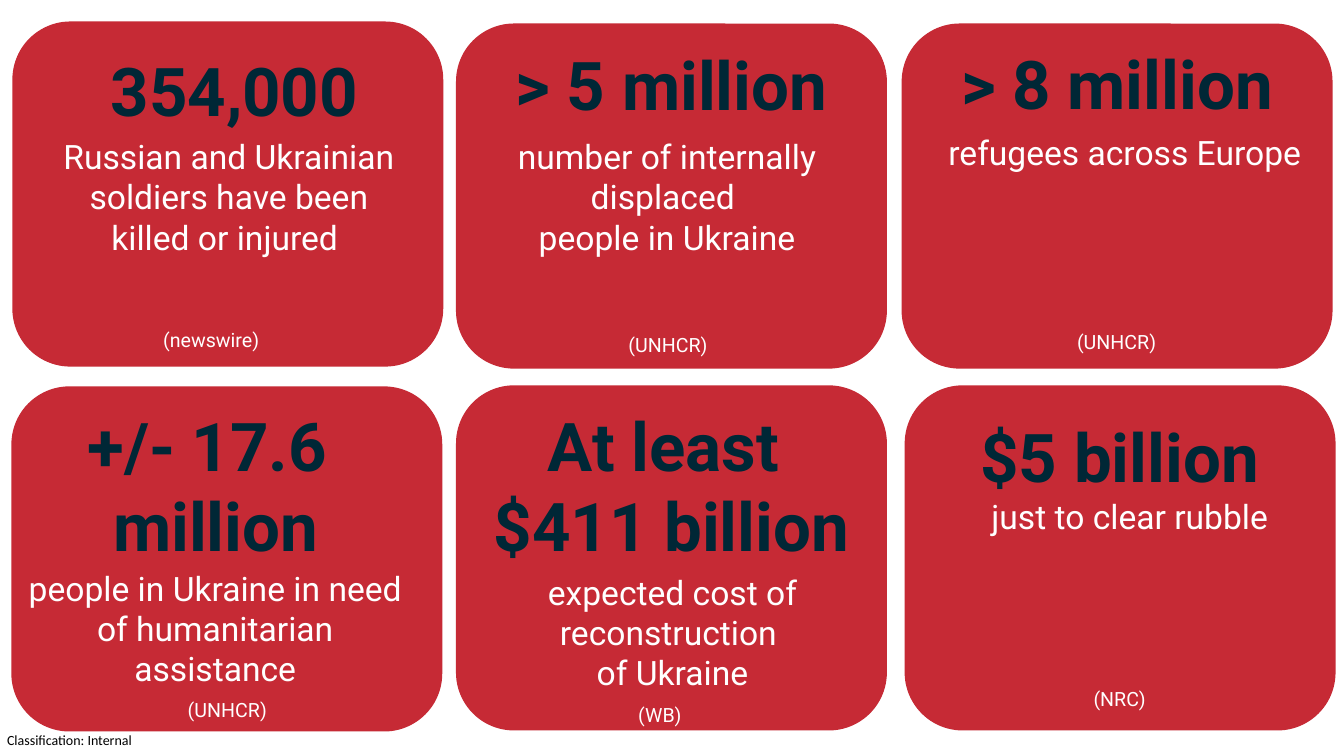
from pptx import Presentation
from pptx.dml.color import RGBColor
from pptx.enum.shapes import MSO_SHAPE
from pptx.enum.text import MSO_AUTO_SIZE, PP_ALIGN
from pptx.util import Inches, Pt

RED = RGBColor(0xC6, 0x2A, 0x35)
NAVY = RGBColor(0x00, 0x27, 0x36)
WHITE = RGBColor(0xFF, 0xFF, 0xFF)
BLACK = RGBColor(0x00, 0x00, 0x00)

CARD_WIDTH, CARD_HEIGHT = 4.26, 3.41
HEADLINE = {"name": "Roboto", "size": Pt(48), "bold": True}
DESCRIPTION = {"name": "Roboto", "size": Pt(24)}
SOURCE = {"name": "Roboto", "size": Pt(14)}
FOOTER = {"name": "Calibri", "size": Pt(10)}

FACTS = [
    {
        "card": (0.13, 0.22),
        "headline": ((0.69, 0.44, 3.27, 0.91), ["354,000"]),
        "description": ((0.44, 1.3, 3.66, 1.31),
                        ["Russian and Ukrainian soldiers have been killed or injured "]),
        "source": ((0.39, 3.2), "(newswire)"),
    },
    {
        "card": (4.53, 0.24),
        "headline": ((3.34, 0.38, 6.64, 0.91), ["> 5 million"]),
        "description": ((4.92, 1.3, 3.39, 1.31),
                        ["number of internally displaced ", "people in Ukraine"]),
        "source": ((4.92, 3.25), "(UNHCR)"),
    },
    {
        "card": (8.95, 0.24),
        "headline": ((7.76, 0.37, 6.64, 0.91), ["> 8 million"]),
        "description": ((7.82, 1.26, 6.67, 0.5), ["refugees across Europe"]),
        "source": ((9.37, 3.22), "(UNHCR)"),
    },
    {
        "card": (0.12, 3.84),
        "headline": ((-1.18, 3.96, 6.64, 1.72), ["+/- 17.6 ", "million"]),
        "description": ((0.1, 5.58, 4.07, 1.31),
                        ["people in Ukraine in need of humanitarian assistance"]),
        "source": ((0.55, 6.87), "(UNHCR)"),
    },
    {
        "card": (4.53, 3.83),
        "headline": ((3.67, 3.96, 5.98, 1.72), ["At least ", "$411 billion"]),
        "description": ((4.48, 5.62, 4.38, 1.31),
                        ["expected cost of reconstruction ", "of Ukraine"]),
        "source": ((4.84, 6.92), "(WB)"),
    },
    {
        "card": (8.98, 3.83),
        "headline": ((9.11, 4.07, 3.99, 0.91), ["$5 billion"]),
        "description": ((7.87, 4.87, 6.67, 0.5), ["just to clear rubble"]),
        "source": ((9.4, 6.77), "(NRC)"),
    },
]


def add_card(page, left, top):
    card = page.shapes.add_shape(
        MSO_SHAPE.ROUNDED_RECTANGLE,
        Inches(left), Inches(top), Inches(CARD_WIDTH), Inches(CARD_HEIGHT))
    card.shadow.inherit = False
    card.fill.solid()
    card.fill.fore_color.rgb = RED
    card.line.color.rgb = RED
    card.line.width = Pt(1)


def add_text(page, place, lines, style, color, align=PP_ALIGN.CENTER):
    box = page.shapes.add_textbox(*[Inches(length) for length in place])
    frame = box.text_frame
    frame.word_wrap = True
    frame.auto_size = MSO_AUTO_SIZE.SHAPE_TO_FIT_TEXT
    for index, line in enumerate(lines):
        para = frame.add_paragraph() if index else frame.paragraphs[0]
        para.alignment = align
        span = para.add_run()
        span.text = line
        span.font.color.rgb = color
        for name, value in style.items():
            setattr(span.font, name, value)
    return frame


def add_footer(page):
    frame = add_text(page, (0.07, 7.26, 1.27, 0.17), ["Classification: Internal"],
                     FOOTER, BLACK, PP_ALIGN.LEFT)
    for side in ("left", "top", "right", "bottom"):
        setattr(frame, f"margin_{side}", 0)


def main():
    deck = Presentation()
    deck.slide_width, deck.slide_height = Inches(13.33), Inches(7.5)
    page = deck.slides.add_slide(deck.slide_layouts.get_by_name("Blank"))
    add_footer(page)
    for fact in FACTS:
        add_card(page, *fact["card"])
    for fact in FACTS:
        add_text(page, *fact["description"], DESCRIPTION, WHITE)
        corner, source = fact["source"]
        add_text(page, (*corner, 3.41, 0.34), [source], SOURCE, WHITE)
        add_text(page, *fact["headline"], HEADLINE, NAVY)
    deck.save("out.pptx")


if __name__ == "__main__":
    main()
